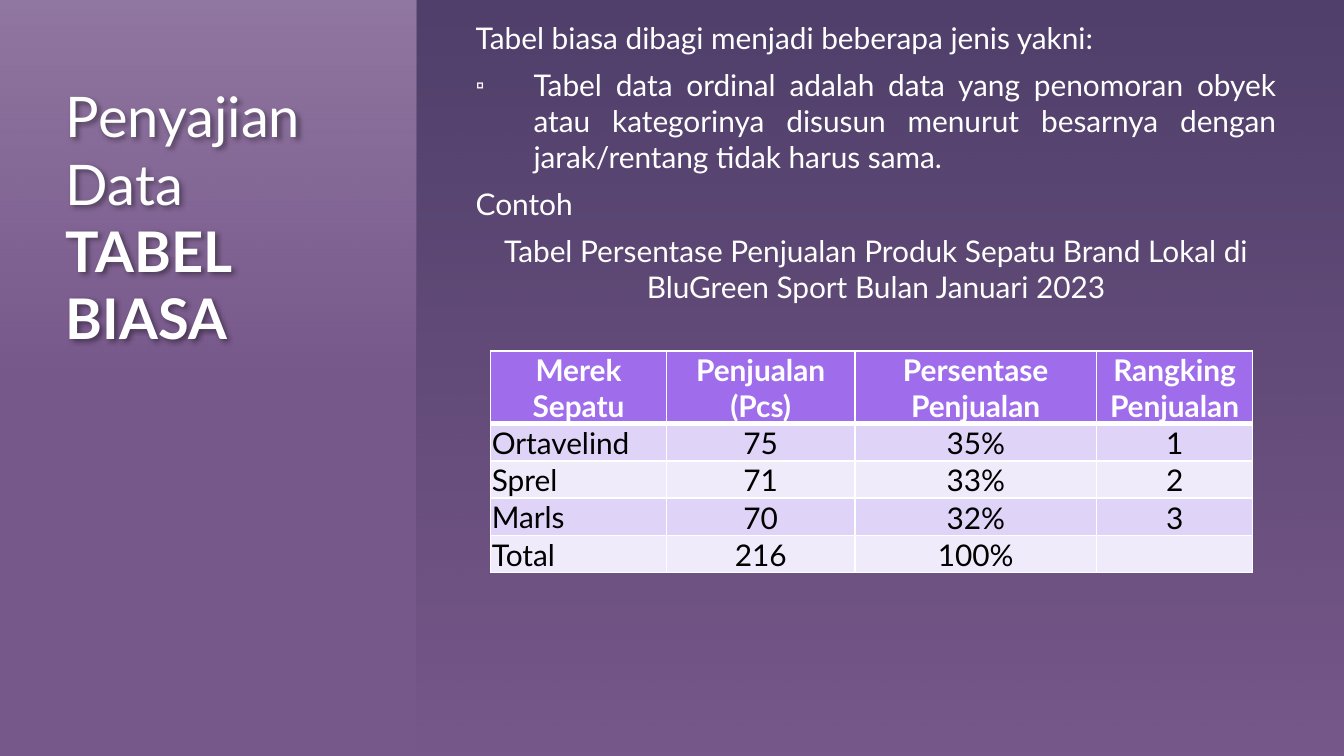
"""Build a slide on ordinary tables, with an example of ordinal sales data."""

from dataclasses import dataclass

from lxml.etree import SubElement
from pptx import Presentation
from pptx.dml.color import RGBColor
from pptx.enum.shapes import MSO_SHAPE
from pptx.enum.text import MSO_ANCHOR, PP_ALIGN
from pptx.oxml.ns import qn
from pptx.util import Inches, Pt


@dataclass(frozen=True)
class Theme:
    font: str = "Lato"
    title_size: int = 30
    body_size: int = 16
    background: str = "77588B"
    white: str = "FFFFFF"
    black: str = "000000"
    navy: str = "020F2B"
    deep_navy: str = "010C16"
    header: str = "9F6DEB"
    bands: tuple = ("DFD4F7", "F0EBFB")


THEME = Theme()


def add_text(p, text, size=THEME.body_size, color=THEME.white, bold=False, align=PP_ALIGN.LEFT):
    p.alignment = align
    r = p.add_run()
    r.text = text
    r.font.size = Pt(size)
    r.font.bold = bold
    r.font.name = THEME.font
    r.font.color.rgb = RGBColor.from_string(color)


def add_box(s, left, top, width, height):
    sp = s.shapes.add_textbox(Inches(left), Inches(top), Inches(width), Inches(height))
    tf = sp.text_frame
    tf.word_wrap = True
    tf.margin_left = tf.margin_top = tf.margin_right = tf.margin_bottom = 0
    return sp


prs = Presentation()
prs.slide_width, prs.slide_height = Inches(10), Inches(10 * 9 / 16)
s = prs.slides.add_slide(prs.slide_layouts[6])
s.background.fill.solid()
s.background.fill.fore_color.rgb = RGBColor.from_string(THEME.background)

panels = [
    (3.1, 6.9, 5.64, ((THEME.navy, 34), (THEME.deep_navy, 0))),
    (-0.01, 3.11, 2.83, ((THEME.white, 19), (THEME.white, 0))),
]
for left, width, height, stops in panels:
    sp = s.shapes.add_shape(MSO_SHAPE.RECTANGLE, Inches(left), Inches(-0.01),
                            Inches(width), Inches(height))
    sp.shadow.inherit = False
    sp.line.fill.background()
    sp.fill.gradient()
    sp.fill.gradient_angle = 270
    for stop, (color, opacity) in zip(sp.fill.gradient_stops, stops):
        stop.color.rgb = RGBColor.from_string(color)
        SubElement(stop._gs.find(qn("a:srgbClr")), qn("a:alpha"), val=str(opacity * 1000))

title = add_box(s, 0.49, 0.61, 2.11, 4.44)
effects = SubElement(title._element.spPr, qn("a:effectLst"))
shadow = SubElement(effects, qn("a:outerShdw"), blurRad=str(Pt(3)), dist=str(Pt(2)), dir="2700000")
shadow_color = SubElement(shadow, qn("a:srgbClr"), val=THEME.black)
SubElement(shadow_color, qn("a:alpha"), val="40000")
p = title.text_frame.paragraphs[0]
add_text(p, "Penyajian Data", size=THEME.title_size)
p.add_line_break()
add_text(p, "TABEL BIASA", size=THEME.title_size, bold=True)

body = [
    ("Tabel biasa dibagi menjadi beberapa jenis yakni:", PP_ALIGN.JUSTIFY, False),
    ("Tabel data ordinal adalah data yang penomoran obyek atau kategorinya disusun "
     "menurut besarnya dengan jarak/rentang tidak harus sama.", PP_ALIGN.JUSTIFY, True),
    ("Contoh", PP_ALIGN.JUSTIFY, False),
    ("Tabel Persentase Penjualan Produk Sepatu Brand Lokal di BluGreen Sport "
     "Bulan Januari 2023", PP_ALIGN.CENTER, False),
]
tf = add_box(s, 3.47, 0.15, 6.03, 1.53).text_frame
for i, (text, align, bulleted) in enumerate(body):
    p = tf.add_paragraph() if i else tf.paragraphs[0]
    if i:
        p.space_before = Pt(6)
    pPr = p._p.get_or_add_pPr()
    pPr.set("marL", str(Inches(0.5 if bulleted else 0.07)))
    pPr.set("indent", str(Inches(-0.43 if bulleted else 0)))
    if bulleted:
        color = SubElement(pPr, qn("a:buClr"))
        SubElement(color, qn("a:srgbClr"), val=THEME.white)
        SubElement(pPr, qn("a:buSzPct"), val="75000")
        SubElement(pPr, qn("a:buFont"), typeface=THEME.font)
        SubElement(pPr, qn("a:buChar"), char="▫")
    add_text(p, text, align=align)

rows = [
    ("Merek Sepatu", "Penjualan (Pcs)", "Persentase Penjualan", "Rangking Penjualan"),
    ("Ortavelind", "75", "35%", "1"),
    ("Sprel", "71", "33%", "2"),
    ("Marls", "70", "32%", "3"),
    ("Total", "216", "100%", ""),
]
col_widths = (1.31, 1.4, 1.8, 1.16)
row_heights = (0.54, 0.27, 0.27, 0.27, 0.27)
table = s.shapes.add_table(len(rows), len(col_widths), Inches(3.65), Inches(2.61),
                           Inches(sum(col_widths)), Inches(sum(row_heights))).table
for column, width in zip(table.columns, col_widths):
    column.width = Inches(width)
for i, (row, values) in enumerate(zip(table.rows, rows)):
    row.height = Inches(row_heights[i])
    is_header = i == 0
    fill = THEME.header if is_header else THEME.bands[(i - 1) % 2]
    borders = {"lnL": 1, "lnR": 1, "lnT": 3 if i == 1 else 1, "lnB": 3 if is_header else 1}
    for j, (cell, value) in enumerate(zip(row.cells, values)):
        is_name = j == 0 and not is_header
        cell.margin_left = cell.margin_top = cell.margin_right = Inches(0.01)
        cell.margin_bottom = 0
        cell.vertical_anchor = MSO_ANCHOR.MIDDLE if is_header or is_name else MSO_ANCHOR.BOTTOM
        p = cell.text_frame.paragraphs[0]
        if value:
            add_text(p, value, color=THEME.white if is_header else THEME.black, bold=is_header,
                     align=PP_ALIGN.JUSTIFY if is_name else PP_ALIGN.CENTER)
        else:
            SubElement(p._p, qn("a:endParaRPr"), sz=str(THEME.body_size * 100))
        tcPr = cell._tc.get_or_add_tcPr()
        for side, points in borders.items():
            line = SubElement(tcPr, qn(f"a:{side}"), w=str(Pt(points)))
            SubElement(SubElement(line, qn("a:solidFill")), qn("a:srgbClr"), val=THEME.white)
        cell.fill.solid()
        cell.fill.fore_color.rgb = RGBColor.from_string(fill)

prs.save("out.pptx")
